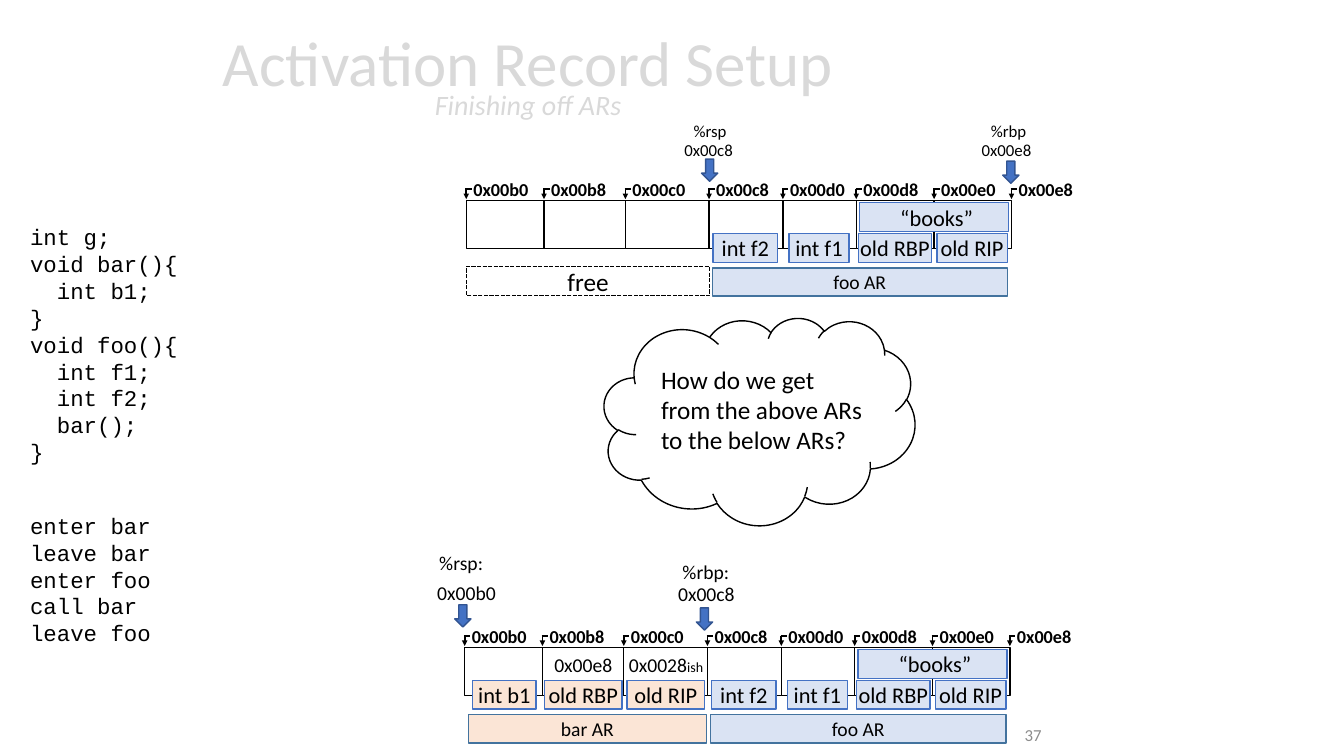
from lxml.etree import SubElement
from pptx import Presentation
from pptx.dml.color import RGBColor
from pptx.enum.dml import MSO_LINE
from pptx.enum.shapes import MSO_CONNECTOR, MSO_SHAPE
from pptx.enum.text import MSO_ANCHOR, PP_ALIGN
from pptx.oxml.ns import qn
from pptx.util import Cm, Pt

theme = {
    "black": RGBColor(0, 0, 0),
    "white": RGBColor(255, 255, 255),
    "pale": RGBColor(0xD9, 0xD9, 0xD9),
    "gray": RGBColor(0x8C, 0x8C, 0x8C),
    "blue": RGBColor(0x44, 0x72, 0xC4),
    "navy": RGBColor(0x32, 0x54, 0x91),
    "steel": RGBColor(0x43, 0x73, 0x9E),
    "sky": RGBColor(0xDA, 0xE3, 0xF3),
    "peach": RGBColor(0xFB, 0xE5, 0xD6),
    "title": 45, "sub": 20, "big": 18, "chip": 16, "mid": 14,
    "mark": 13, "note": 12, "tiny": 10,
    "body": "Calibri", "code": "Courier New",
}

deck = Presentation()
deck.slide_width, deck.slide_height = Cm(33.87), Cm(19.05)
slide = deck.slides.add_slide(deck.slide_layouts[6])


def put(text, x, y, w, h, kind=None, fill=None, line="black", dash=None, turn=0,
        size="mid", font="body", color="black", bold=False, align=PP_ALIGN.LEFT,
        anchor=MSO_ANCHOR.TOP, pad=(0, 0), wrap=False, space=None,
        tail="", small="tiny", slant=False, split=False):
    area = Cm(x), Cm(y), Cm(w), Cm(h)
    if kind is None:
        shape = slide.shapes.add_textbox(*area)
    else:
        shape = slide.shapes.add_shape(kind, *area)
        shape.shadow.inherit = False
        shape.rotation = turn
        shape.line.color.rgb = theme[line]
        shape.line.width = Pt(1)
        if dash:
            shape.line.dash_style = dash
        if fill:
            shape.fill.solid()
            shape.fill.fore_color.rgb = theme[fill]
        else:
            shape.fill.background()
    if not text:
        return
    frame = shape.text_frame
    frame.word_wrap, frame.vertical_anchor = wrap, anchor
    frame.margin_left = frame.margin_right = Cm(pad[0])
    frame.margin_top = frame.margin_bottom = Cm(pad[1])
    for i, words in enumerate(text.split("\n")):
        para = frame.paragraphs[0] if i == 0 else frame.add_paragraph()
        para.alignment = align
        if space:
            para.line_spacing = space
        for part, scale, lean in ((words, size, False), (tail, small, slant)):
            if not part:
                continue
            if part == tail and split:
                para.add_line_break()
            run = para.add_run()
            run.text = part
            run.font.name = theme[font]
            run.font.size = Pt(theme[scale])
            run.font.color.rgb = theme[color]
            run.font.bold, run.font.italic = bold, lean


def rule(x1, y1, x2, y2, head=False):
    link = slide.shapes.add_connector(
        MSO_CONNECTOR.STRAIGHT, Cm(x1), Cm(y1), Cm(x2), Cm(y2))
    link.line.color.rgb = theme["black"]
    link.line.width = Pt(1.25)
    props = link._element.spPr
    if head:
        SubElement(props.find(qn("a:ln")), qn("a:tailEnd"),
                   type="triangle", w="sm", len="sm")
    SubElement(props, qn("a:effectLst"))


mid = {"align": PP_ALIGN.CENTER, "anchor": MSO_ANCHOR.MIDDLE}
rect = MSO_SHAPE.RECTANGLE

put("Activation Record Setup", 2.36, 0.23, 21.9, 3.68, size="title", color="pale",
    pad=(0.25, 0.13), wrap=True, space=0.7, tail="Finishing off ARs",
    small="sub", slant=True, split=True, **mid)
put("37", 20.78, 18.01, 5.72, 1.02, size="note", color="gray", pad=(0.25, 0.13),
    wrap=True, align=PP_ALIGN.RIGHT, anchor=MSO_ANCHOR.MIDDLE)

edges = [11.71, 13.67, 15.72, 17.83, 19.69, 21.54, 23.5, 25.45]
marks = ["0x00b0", "0x00b8", "0x00c0", "0x00c8", "0x00d0", "0x00d8", "0x00e0", "0x00e8"]
foo = [("int f2", 17.93, 1.63), ("int f1", 19.84, 1.52),
       ("old RBP", 21.59, 1.85), ("old RIP", 23.57, 1.78)]
bar = [("int b1", 11.91, 1.6), ("old RBP", 13.72, 1.96), ("old RIP", 15.8, 1.96)]
full = [("foo AR", 17.91, 7.44, "sky", foo), ("bar AR", 11.81, 5.99, "peach", bar)]

for left, top, frames in ((0.04, 5.05, full[:1]), (0, 16.31, full)):
    for start, end in zip(edges, edges[1:]):
        put("", start + left, top, end - start, 1.22, rect, "white")
    for name, x, w, fill, chips in frames:
        put(name, x + left, top + 1.7, w, 0.71, rect, fill, "steel", **mid)
        for chip, x, w in chips:
            put(chip, x + left, top + 0.84, w, 0.72, rect, fill, "blue",
                size="chip", **mid)
    for x, mark in zip(edges, marks):
        x += left
        put(mark, x + 0.18, top - 0.56, 1.6, 0.56, size="mark", bold=True, wrap=True)
        rule(x, top - 0.28, x, top - 0.03, head=True)
        rule(x - 0.02, top - 0.28, x + 0.14, top - 0.28)
    put(" “books”", 21.62 + left, top + 0.05, 3.76, 0.74, rect, "sky", "blue",
        size="chip", **mid)

put("0x00e8", 13.97, 16.46, 1.7, 0.61, wrap=True)
put("0x0028", 15.85, 16.46, 2.1, 0.61, tail="ish", wrap=True)
put("free", 11.76, 6.71, 6.12, 0.74, rect, dash=MSO_LINE.SQUARE_DOT, size="big",
    align=PP_ALIGN.CENTER)

for x, y in ((17.68, 4.01), (25.27, 4.06), (11.46, 15.24), (17.55, 15.32)):
    put("", x, y, 0.41, 0.56, MSO_SHAPE.DOWN_ARROW, "blue", "navy")

for text, x, y, size in (
        ("%rsp", 17.48, 3.05, "note"), ("0x00c8", 17.25, 3.51, "note"),
        ("%rbp", 24.97, 3.05, "note"), ("0x00e8", 24.74, 3.51, "note"),
        ("%rsp:", 11.07, 13.89, "mid"), ("0x00b0", 11.02, 14.63, "mid"),
        ("%rbp:", 17.2, 14.1, "mid"), ("0x00c8", 17.09, 14.66, "mid")):
    put(text, x, y, 1.8, 0.6, size=size, wrap=True)

put("", 15.21, 7.95, 7.85, 5.28, MSO_SHAPE.CLOUD, "white", turn=3.6)
put("", 21.21, 10.54, 0.84, 1.14, rect, "white", "white", turn=345.3)
put("How do we get\nfrom the above ARs\nto the below ARs?", 16.41, 9.04, 5.64, 2.57,
    size="big", pad=(0.25, 0.13))

code = """int g;
void bar(){
  int b1;
}
void foo(){
  int f1;
  int f2;
  bar();
}"""
steps = "enter bar\nleave bar\nenter foo\ncall bar\nleave foo"
for text, y, w, h in ((code, 5.5, 4.29, 6.4), (steps, 12.77, 3.61, 3.68)):
    put(text, 0.51, y, w, h, size="chip", font="code", pad=(0.25, 0.13))

deck.save("out.pptx")
